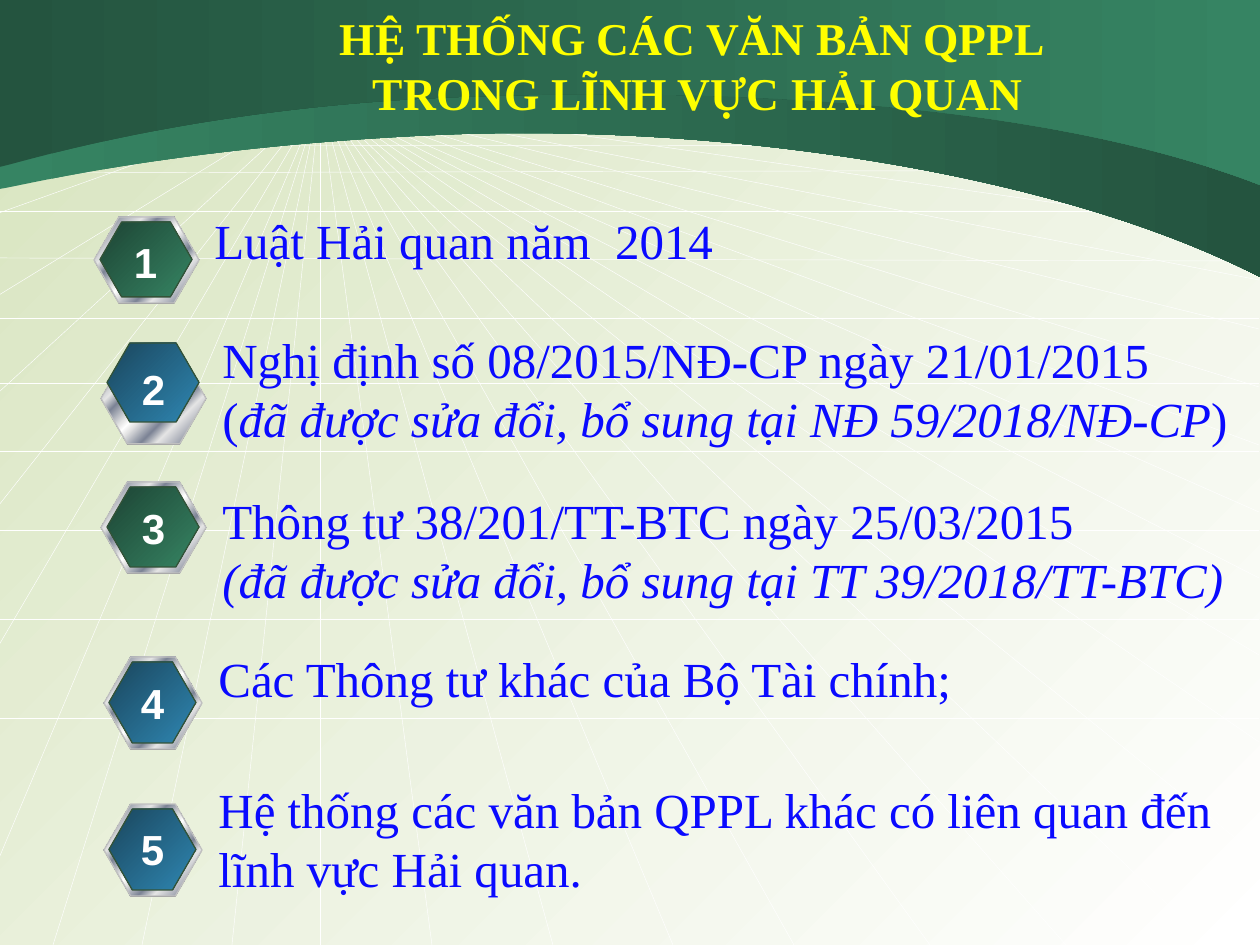
from dataclasses import dataclass

from lxml import etree
from pptx import Presentation
from pptx import util as u
from pptx.dml.color import RGBColor
from pptx.enum import shapes, text
from pptx.oxml import ns

SCALE = 914400 / 126
WIDTH, HEIGHT = 1260, 945
LEFT, RIGHT = -1, 1259
HUB = (320, 98)

Box = tuple[int, int, int, int]
Point = tuple[int, int]
Stops = tuple[tuple[int, str], ...]


@dataclass(frozen=True)
class Theme:
    serif: str = "Times New Roman"
    sans: str = "Arial"
    title_pt: int = 26
    body_pt: int = 28
    number_pt: int = 24
    title: str = "FFFF00"
    body: str = "0A0AFF"
    white: str = "FFFFFF"
    shade: str = "808080"
    rim_line: str = "C0C0C0"
    face_line: str = "335338"
    page: Stops = ((0, "D7E4BE"), (100, "FFFFFF"))
    band_back: Stops = ((0, "368463"), (100, "24543F"))
    band_front: Stops = ((0, "24543F"), (100, "368463"))
    green: Stops = ((0, "1D4434"), (100, "368463"))
    blue: Stops = ((0, "1A465D"), (100, "2F86B1"))
    metal: Stops = (
        (0, "E6E6E6"), (8, "7D8496"), (26, "E6E6E6"), (34, "7D8496"),
        (46, "E6E6E6"), (50, "FFFFFF"), (54, "E6E6E6"), (66, "7D8496"),
        (74, "E6E6E6"), (92, "7D8496"), (100, "E6E6E6"),
    )


THEME = Theme()


@dataclass(frozen=True)
class Run:
    text: str
    italic: bool = False


@dataclass(frozen=True)
class Style:
    font: str
    size: int
    color: str
    bold: bool = False
    align: text.PP_ALIGN = text.PP_ALIGN.LEFT


@dataclass(frozen=True)
class Item:
    lines: tuple[tuple[Run, ...], ...]
    text_box: Box
    rim: Box
    face: Box
    number_at: Point
    color: Stops
    wrap: bool = True


TITLE = Style(THEME.serif, THEME.title_pt, THEME.title, True, text.PP_ALIGN.CENTER)
BODY = Style(THEME.serif, THEME.body_pt, THEME.body)
NUMBER = Style(THEME.sans, THEME.number_pt, THEME.white, True, text.PP_ALIGN.CENTER)

ITEMS = (
    Item(((Run("Luật Hải quan năm  2014"),),),
         (202, 204, 951, 131), (94, 217, 105, 86), (100, 222, 92, 75),
         (121, 230), THEME.green),
    Item(((Run("Nghị định số 08/2015/NĐ-CP ngày 21/01/2015"),),
          (Run("("), Run("đã được sửa đổi, bổ sung tại NĐ 59/2018/NĐ-CP", True), Run(")"))),
         (210, 323, 1036, 183), (101, 353, 105, 91), (107, 343, 92, 79),
         (129, 357), THEME.blue, False),
    Item(((Run("Thông tư 38/201/TT-BTC ngày 25/03/2015"),),
          (Run("(đã được sửa đổi, bổ sung tại TT 39/2018/TT-BTC)", True),)),
         (210, 484, 1056, 131), (101, 482, 105, 91), (107, 487, 92, 80),
         (129, 496), THEME.green, False),
    Item(((Run("Các Thông tư khác của Bộ Tài chính;"),),),
         (206, 642, 1028, 72), (104, 657, 98, 92), (109, 662, 87, 81),
         (128, 671), THEME.blue),
    Item(((Run("Hệ thống các văn bản QPPL khác có liên quan đến lĩnh vực Hải quan."),),),
         (206, 773, 1028, 131), (104, 804, 98, 92), (109, 809, 87, 81),
         (128, 817), THEME.blue),
)

RAY_RIGHT = (126, 155, 194, 232, 280, 329, 387, 445, 512, 578, 655, 742, 857)
RAY_BOTTOM = (53, 142, 232, 320, 432, 553, 673, 794, 930, 1066, 1210)
RAY_LEFT = (98, 122, 146, 147, 213, 295, 392, 505, 645, 858)
LEVELS = ((106, 106), (113, 113), (126, 122), (145, 146), (173, 170),
          (211, 211), (258, 261), (318, 318), (383, 383), (451, 451),
          (530, 530), (619, 619), (718, 718))

BACK_CURVE = ((-1, 189), (14, 188), (168, 147), (437, 135),
              (707, 123), (1047, 168), (1260, 277))
FRONT_CURVE = ((-1, 167), (14, 165), (190, 107), (459, 97),
               (727, 87), (1047, 102), (1260, 185))


def px(value: int) -> u.Emu:
    return u.Emu(round(value * SCALE))


def rgb(color: str) -> RGBColor:
    return RGBColor.from_string(color)


def set_gradient(fill, element, stops: Stops, angle: int) -> None:
    fill.gradient()
    fill.gradient_angle = -angle % 360
    stop_list = element.find(".//" + ns.qn("a:gsLst"))
    stop_list.clear()
    for position, color in stops:
        stop = etree.SubElement(stop_list, ns.qn("a:gs"), pos=str(position * 1000))
        etree.SubElement(stop, ns.qn("a:srgbClr"), val=color)


def add_line(g, start: Point, end: Point) -> None:
    line = g.shapes.add_connector(
        shapes.MSO_CONNECTOR.STRAIGHT, *map(px, (*start, *end)))
    line.line.color.rgb = rgb(THEME.white)
    line.line.width = u.Pt(0.25)
    etree.SubElement(line._element.spPr, ns.qn("a:effectLst"))


def add_band(s, curve: tuple[Point, ...], stops: Stops) -> None:
    builder = s.shapes.build_freeform(*curve[0], scale=SCALE)
    builder.add_line_segments([*curve[1:], (WIDTH, 0), (LEFT, 0)], close=True)
    band = builder.convert_to_shape()
    segments = list(band._element.iter(ns.qn("a:lnTo")))
    for first in (0, 3):
        bezier = etree.Element(ns.qn("a:cubicBezTo"))
        segments[first].addprevious(bezier)
        for segment in segments[first:first + 3]:
            bezier.append(segment[0])
            segment.getparent().remove(segment)
    band.shadow.inherit = False
    band.line.fill.background()
    set_gradient(band.fill, band._element, stops, 0)


def add_hexagon(g, box: Box, fill: str | Stops, outline: str | None = None) -> None:
    hexagon = g.shapes.add_shape(shapes.MSO_SHAPE.HEXAGON, *map(px, box))
    hexagon.adjustments[0] = 0.289
    hexagon.shadow.inherit = False
    if isinstance(fill, str):
        hexagon.fill.solid()
        hexagon.fill.fore_color.rgb = rgb(fill)
    else:
        set_gradient(hexagon.fill, hexagon._element, fill, 45)
    if outline:
        hexagon.line.color.rgb = rgb(outline)
        hexagon.line.width = u.Pt(0.75)
    else:
        hexagon.line.fill.background()


def add_text(g, box: Box, lines: tuple[tuple[Run, ...], ...], style: Style,
             wrap: bool = True, anchor: text.MSO_ANCHOR = text.MSO_ANCHOR.TOP) -> None:
    tf = g.shapes.add_textbox(*map(px, box)).text_frame
    tf.word_wrap = wrap
    tf.vertical_anchor = anchor
    for i, line in enumerate(lines):
        p = tf.add_paragraph() if i else tf.paragraphs[0]
        p.alignment = style.align
        p.font.name = style.font
        p.font.size = u.Pt(style.size)
        p.font.bold = style.bold
        p.font.color.rgb = rgb(style.color)
        for part in line:
            for j, piece in enumerate(part.text.split("\n")):
                if j:
                    p.add_line_break()
                r = p.add_run()
                r.text = piece
                if part.italic:
                    r.font.italic = True


def add_item(g, number: int, item: Item) -> None:
    add_text(g, item.text_box, item.lines, BODY, item.wrap)
    x, y, w, h = item.rim
    add_hexagon(g, (x, y + 1, w, h), THEME.shade)
    add_hexagon(g, item.rim, THEME.metal, THEME.rim_line)
    add_hexagon(g, item.face, item.color, THEME.face_line)
    add_text(g, (*item.number_at, 49, 63), ((Run(str(number)),),), NUMBER, False)


def main() -> None:
    prs = Presentation()
    prs.slide_width, prs.slide_height = px(WIDTH), px(HEIGHT)
    s = prs.slides.add_slide(prs.slide_layouts[6])
    set_gradient(s.background.fill, s._element, THEME.page, 45)
    rays = s.shapes.add_group_shape()
    ends = [(RIGHT, y) for y in RAY_RIGHT]
    ends += [(x, HEIGHT) for x in RAY_BOTTOM]
    ends += [(LEFT, y) for y in RAY_LEFT]
    for end in ends:
        add_line(rays, HUB, end)
    for left_y, right_y in LEVELS:
        add_line(rays, (LEFT, left_y), (RIGHT, right_y))
    add_band(s, BACK_CURVE, THEME.band_back)
    add_band(s, FRONT_CURVE, THEME.band_front)
    add_text(s, (184, 26, 1018, 78),
             ((Run("HỆ THỐNG CÁC VĂN BẢN QPPL\n TRONG LĨNH VỰC HẢI QUAN"),),),
             TITLE, anchor=text.MSO_ANCHOR.MIDDLE)
    for number, item in enumerate(ITEMS, 1):
        add_item(s.shapes.add_group_shape(), number, item)
    prs.save("out.pptx")


if __name__ == "__main__":
    main()
